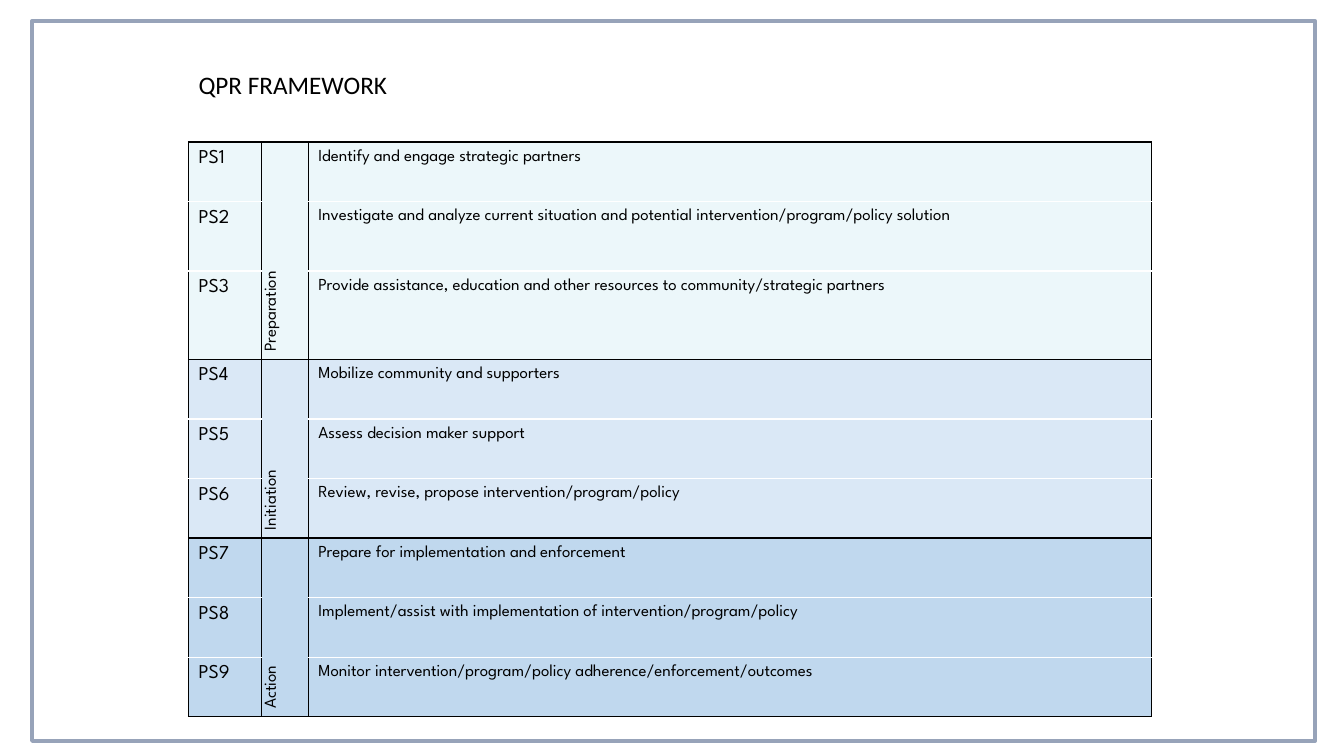
from lxml import etree
from pptx import Presentation
from pptx.dml.color import RGBColor
from pptx.enum import shapes, text
from pptx.oxml.ns import qn
from pptx.util import Cm, Pt

HEADING = "QPR FRAMEWORK"
# (phase, fill, steps)
PHASES = [
    ("Preparation", "ECF7FA", [
        "Identify and engage strategic partners",
        "Investigate and analyze current situation and potential "
        "intervention/program/policy solution",
        "Provide assistance, education and other resources to community/strategic partners",
    ]),
    ("Initiation", "DAE8F6", [
        "Mobilize community and supporters",
        "Assess decision maker support",
        "Review, revise, propose intervention/program/policy",
    ]),
    ("Action", "C0D8EE", [
        "Prepare for implementation and enforcement",
        "Implement/assist with implementation of intervention/program/policy",
        "Monitor intervention/program/policy adherence/enforcement/outcomes",
    ]),
]
COLUMN_WIDTHS = [1.85, 1.17, 21.24]
ROW_HEIGHT = 1.5
TALL_ROWS = {1: 1.75, 2: 1.7}
BLACK, WHITE, FRAME_BLUE = "000000", "FFFFFF", "97A3B9"


def color(value):
    return RGBColor.from_string(value)


def write(frame, words, font="League Spartan", size=12, align=text.PP_ALIGN.JUSTIFY,
          line=1.15, before=5, after=10, indent=0):
    paragraph = frame.paragraphs[0]
    paragraph.alignment = align
    paragraph.line_spacing = line
    paragraph.space_before, paragraph.space_after = Pt(before), Pt(after)
    if indent:
        paragraph._p.get_or_add_pPr().set("marL", str(Cm(indent)))
    run = paragraph.add_run()
    run.text = words
    run.font.name, run.font.size = font, Pt(size)
    run.font.color.rgb = color(BLACK)


def style_cell(cell, fill, top=BLACK, bottom=BLACK):
    properties = cell._tc.get_or_add_tcPr()
    for side, edge in (("L", BLACK), ("R", BLACK), ("T", top), ("B", bottom)):
        border = etree.SubElement(properties, qn(f"a:ln{side}"), w=str(Pt(1)))
        solid = etree.SubElement(border, qn("a:solidFill"))
        etree.SubElement(solid, qn("a:srgbClr"), val=edge)
    cell.fill.solid()
    cell.fill.fore_color.rgb = color(fill)


prs = Presentation()
prs.slide_width, prs.slide_height = Cm(33.87), Cm(19.05)
slide = prs.slides.add_slide(prs.slide_layouts[5])

# Frame around the slide
frame = slide.shapes.add_shape(shapes.MSO_SHAPE.RECTANGLE,
                               Cm(0.81), Cm(0.53), Cm(32.33), Cm(18.14))
frame.shadow.inherit = False
frame.fill.background()
frame.line.color.rgb = color(FRAME_BLUE)
frame.line.width = Pt(3)

# Heading
heading = slide.shapes.title
heading.left, heading.top, heading.width, heading.height = Cm(4.75), Cm(1.63), Cm(18.82), Cm(1.02)
heading.text_frame.vertical_anchor = text.MSO_ANCHOR.TOP
write(heading.text_frame, HEADING, font="Calibri", size=18,
      align=text.PP_ALIGN.LEFT, line=1.0, before=0, after=0)

# Framework table
row_count = sum(len(steps) for _, _, steps in PHASES)
heights = [TALL_ROWS.get(row, ROW_HEIGHT) for row in range(row_count)]
framework = slide.shapes.add_table(row_count, len(COLUMN_WIDTHS), Cm(4.75), Cm(3.58),
                                   Cm(sum(COLUMN_WIDTHS)), Cm(sum(heights))).table
framework.first_row = framework.horz_banding = False
for column, width in zip(framework.columns, COLUMN_WIDTHS):
    column.width = Cm(width)
for row, height in zip(framework.rows, heights):
    row.height = Cm(height)

first = 0
for phase, fill, steps in PHASES:
    last = first + len(steps) - 1
    for row, step in enumerate(steps, first):
        code_cell, phase_cell, step_cell = framework.rows[row].cells
        for cell in (code_cell, step_cell):
            style_cell(cell, fill, top=BLACK if row == first else WHITE,
                       bottom=BLACK if row == last else WHITE)
        style_cell(phase_cell, fill)
        write(code_cell.text_frame, f"PS{row + 1}", size=14)
        write(step_cell.text_frame, step)

    # Phase name reads upwards beside its steps
    phase_cell = framework.cell(first, 1)
    phase_cell.merge(framework.cell(last, 1))
    phase_cell.margin_left = phase_cell.margin_right = Cm(0)
    phase_cell.margin_top = phase_cell.margin_bottom = Cm(0)
    phase_cell._tc.get_or_add_tcPr().set("vert", "vert270")
    write(phase_cell.text_frame, phase, indent=0.2)
    first = last + 1

prs.save("out.pptx")
